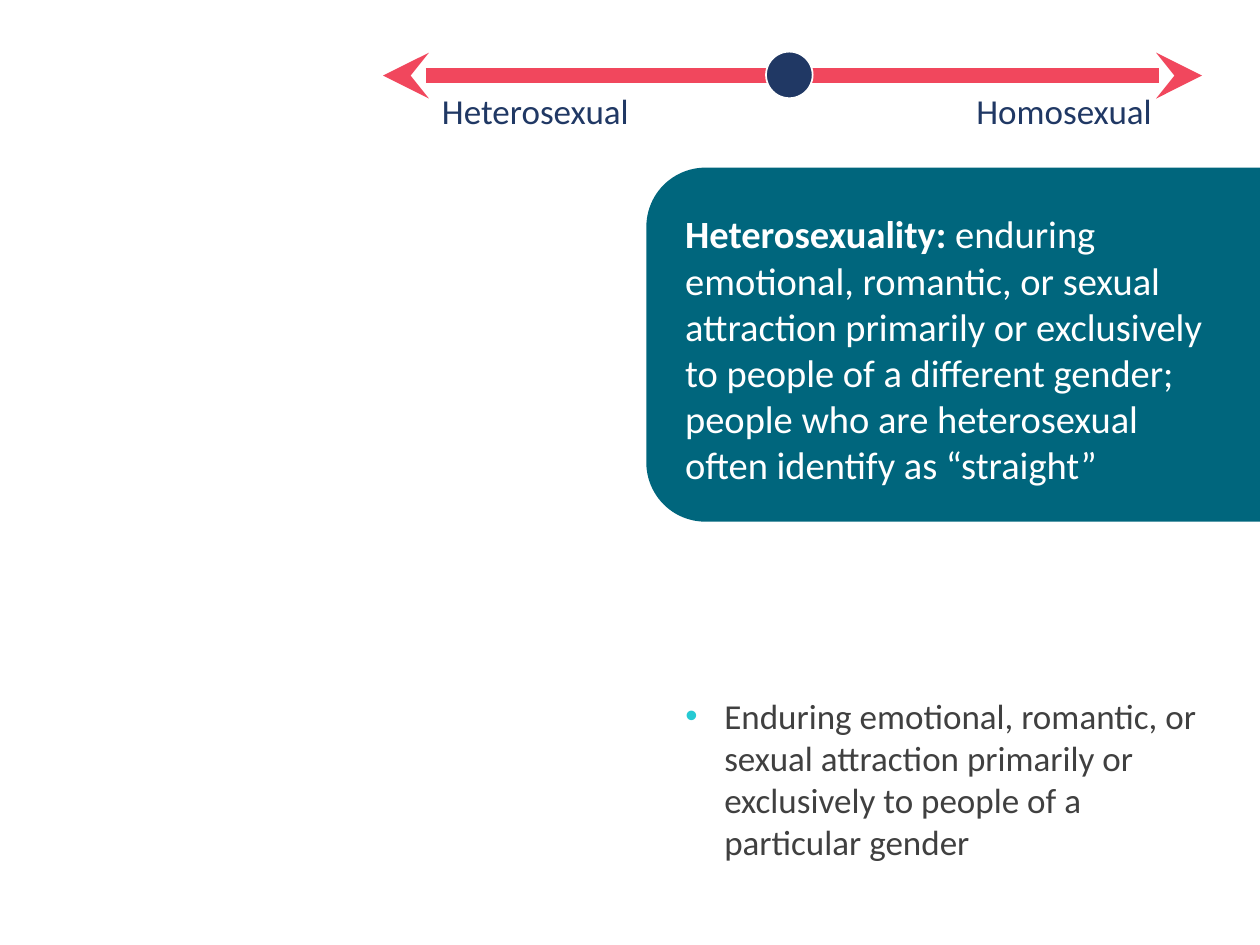
from lxml import etree
from pptx import Presentation
from pptx.dml.color import RGBColor
from pptx.enum.shapes import MSO_CONNECTOR, MSO_SHAPE
from pptx.enum.text import MSO_ANCHOR, MSO_AUTO_SIZE, PP_ALIGN
from pptx.oxml.ns import qn
from pptx.util import Inches, Pt

STRAIGHT = MSO_CONNECTOR.STRAIGHT
ROUNDED_TOP, RECTANGLE, OVAL = (
    MSO_SHAPE.ROUND_2_SAME_RECTANGLE, MSO_SHAPE.RECTANGLE, MSO_SHAPE.OVAL)
LEFT, RIGHT = PP_ALIGN.LEFT, PP_ALIGN.RIGHT
TOP, GROW = MSO_ANCHOR.TOP, MSO_AUTO_SIZE.SHAPE_TO_FIT_TEXT

TEAL = RGBColor(0x00, 0x66, 0x7D)
CORAL = RGBColor(0xF1, 0x47, 0x5D)
NAVY = RGBColor(0x20, 0x38, 0x64)
GREY = RGBColor(0x40, 0x40, 0x40)
WHITE = RGBColor(0xFF, 0xFF, 0xFF)
BULLET_HEX = "26CAD3"
FONT = "Calibri"


def inches(*lengths):
    return [Inches(length) for length in lengths]


def add_filled(shapes, preset, box, color):
    shape = shapes.add_shape(preset, *inches(*box))
    shape.shadow.inherit = False
    shape.fill.solid()
    shape.fill.fore_color.rgb = color
    shape.line.fill.background()
    return shape


def add_run(paragraph, text, size, color, bold=False):
    run = paragraph.add_run()
    run.text = text
    run.font.name = FONT
    run.font.size = Pt(size)
    run.font.color.rgb = color
    run.font.bold = bold


def add_spectrum(slide, box):
    """Double-headed scale with a label under each end and a marker on it."""
    left, top, width, height = box
    marker_size = 0.37
    axis_y = top + 0.19

    axis = slide.shapes.add_connector(
        STRAIGHT, *inches(left, axis_y, left + width, axis_y))
    axis.line.color.rgb = CORAL
    axis.line.width = Pt(8.75)
    line_xml = axis.line._get_or_add_ln()
    for end in ("a:headEnd", "a:tailEnd"):
        etree.SubElement(line_xml, qn(end), type="stealth")
    etree.SubElement(axis._element.spPr, qn("a:effectLst"))

    # End labels, each wide enough for one line and aligned outwards
    label_width, label_height = 1.7, 0.44
    label_top = top + height - label_height
    for text, label_left, align in (
            ("Heterosexual", left + 0.37, LEFT),
            ("Homosexual", left + width - 0.3 - label_width, RIGHT)):
        label = slide.shapes.add_textbox(
            *inches(label_left, label_top, label_width, label_height))
        label.text_frame.word_wrap = True
        paragraph = label.text_frame.paragraphs[0]
        paragraph.alignment = align
        add_run(paragraph, text, 20, NAVY)

    # Position marker
    marker = add_filled(slide.shapes, OVAL,
                        (left + 3.04, top, marker_size, marker_size), NAVY)
    marker.line.color.rgb = WHITE
    marker.line.width = Pt(1)


def add_definition(slide, box):
    """Panel rounded on its left side, holding a term and its definition."""
    left, top, width, height = box
    group = slide.shapes.add_group_shape()

    # The rounded top is turned to the left about the panel's centre
    panel = add_filled(group.shapes, ROUNDED_TOP,
                       (left + (width - height) / 2, top + (height - width) / 2,
                        height, width), TEAL)
    panel.rotation = 270

    definition = add_filled(group.shapes, RECTANGLE,
                            (left + 0.21, top + 0.29, 4.46, 2.32), TEAL)
    frame = definition.text_frame
    frame.word_wrap = True
    frame.auto_size = GROW
    frame.vertical_anchor = TOP
    paragraph = frame.paragraphs[0]
    paragraph.alignment = LEFT
    paragraph.space_after = Pt(15)
    add_run(paragraph, "Heterosexuality: ", 22, WHITE, bold=True)
    add_run(paragraph, "enduring emotional, romantic, or sexual attraction "
            "primarily or exclusively to people of a different gender; people "
            "who are heterosexual often identify as “straight”", 22, WHITE)


def add_summary(slide, box):
    """Single bulleted statement."""
    frame = slide.shapes.add_textbox(*inches(*box)).text_frame
    frame.word_wrap = True
    frame.auto_size = GROW
    paragraph = frame.paragraphs[0]
    properties = paragraph._p.get_or_add_pPr()
    indent = Inches(0.31)
    properties.set("marL", str(indent))
    properties.set("indent", str(-indent))
    bullet_color = etree.SubElement(properties, qn("a:buClr"))
    etree.SubElement(bullet_color, qn("a:srgbClr"), val=BULLET_HEX)
    etree.SubElement(properties, qn("a:buFont"), typeface="Arial")
    etree.SubElement(properties, qn("a:buChar"), char="•")
    add_run(paragraph, "Enduring emotional, romantic, or sexual attraction "
            "primarily or exclusively to people of a particular gender",
            20, GREY)


def main():
    deck = Presentation()
    deck.slide_width, deck.slide_height = inches(10, 7.5)
    slide = deck.slides.add_slide(deck.slide_layouts[6])
    add_definition(slide, (5.13, 1.33, 4.88, 2.81))
    add_summary(slide, (5.34, 5.46, 4.39, 1.45))
    add_spectrum(slide, (3.04, 0.41, 6.5, 0.69))
    deck.save("out.pptx")


if __name__ == "__main__":
    main()
